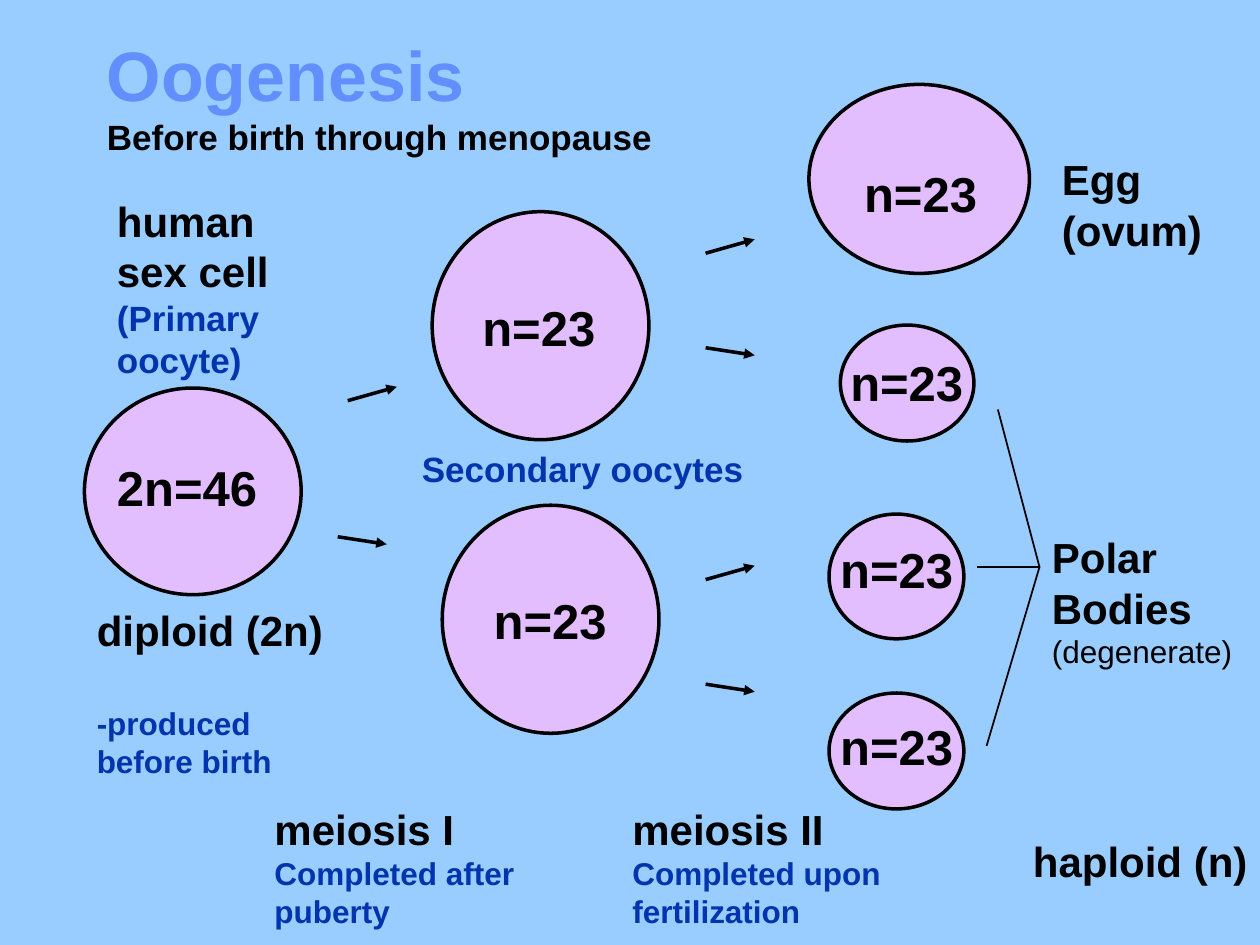
"""Build the Oogenesis slide: meiosis from primary oocyte to egg and polar bodies."""
from dataclasses import dataclass

from lxml.etree import SubElement
from pptx import Presentation
from pptx.dml.color import RGBColor
from pptx.enum.shapes import MSO_CONNECTOR, MSO_SHAPE
from pptx.enum.text import MSO_ANCHOR
from pptx.oxml.ns import qn
from pptx.util import Inches, Pt


@dataclass(frozen=True)
class Theme:
    """Colours, font and type sizes."""
    background: str = "99CCFF"
    cell: str = "E3BEFF"
    ink: str = "000000"
    note: str = "0234AD"
    title: str = "618FFD"
    font: str = "Arial"
    title_size: int = 40
    count_size: int = 28
    label_size: int = 24
    sub_size: int = 20
    note_size: int = 18


THEME = Theme()


def rgb(value):
    """Turn a hex string into a colour."""
    return RGBColor.from_string(value)


def add_run(p, text, size=THEME.label_size, color=THEME.ink, bold=True):
    """Add a formatted run to a paragraph."""
    r = p.add_run()
    r.text = text
    r.font.name = THEME.font
    r.font.size = Pt(size)
    r.font.bold = bold
    r.font.color.rgb = rgb(color)


class Diagram:
    """Hold the style and the current slide, and draw each kind of element."""

    def __init__(self, slide, theme):
        """Keep the slide and theme, and paint the background."""
        self.s, self.theme = slide, theme
        slide.background.fill.solid()
        slide.background.fill.fore_color.rgb = rgb(theme.background)

    def cell(self, x, y, w, h):
        """Draw an outlined oval cell."""
        sp = self.s.shapes.add_shape(
            MSO_SHAPE.OVAL, Inches(x), Inches(y), Inches(w), Inches(h))
        sp.shadow.inherit = False
        sp.fill.solid()
        sp.fill.fore_color.rgb = rgb(self.theme.cell)
        sp.line.color.rgb = rgb(self.theme.ink)
        sp.line.width = Pt(2)

    def text(self, x, y, w, h, *lines, anchor=MSO_ANCHOR.TOP):
        """Write (text, format) lines, one paragraph each."""
        tf = self.s.shapes.add_textbox(
            Inches(x), Inches(y), Inches(w), Inches(h)).text_frame
        tf.word_wrap = True
        tf.vertical_anchor = anchor
        for i, (text, style) in enumerate(lines):
            p = tf.add_paragraph() if i else tf.paragraphs[0]
            style = dict(style)
            p.space_before = Pt(style.pop("before", 0))
            add_run(p, text, **style)

    def count(self, x, y, text="n=23", w=1.15):
        """Write a chromosome count."""
        self.text(x, y, w, 0.57, (text, {"size": self.theme.count_size}))

    def line(self, start, end, width=1, arrow=False):
        """Draw a straight line, with an arrowhead on request."""
        points = [Inches(v) for v in (*start, *end)]
        sp = self.s.shapes.add_connector(MSO_CONNECTOR.STRAIGHT, *points)
        sp.line.color.rgb = rgb(self.theme.ink)
        sp.line.width = Pt(width)
        if arrow:
            SubElement(sp.line._get_or_add_ln(), qn("a:tailEnd"), type="triangle")
        SubElement(sp._element.spPr, qn("a:effectLst"))

    def arrow(self, x, y, rise):
        """Draw a short division arrow."""
        self.line((x, y), (x + 0.39, y + rise), width=2, arrow=True)


def main():
    """Build and save the slide."""
    prs = Presentation()
    prs.slide_width, prs.slide_height = Inches(10), Inches(7.5)
    d = Diagram(prs.slides.add_slide(prs.slide_layouts[6]), THEME)
    label = {}
    sub = {"size": THEME.sub_size, "color": THEME.note}
    note = {"size": THEME.note_size, "color": THEME.note}
    up, down = -0.11, 0.06

    d.text(0.75, 0.25, 5.42, 1,
           ("Oogenesis", {"size": THEME.title_size, "color": THEME.title}),
           ("Before birth through menopause", {"size": THEME.sub_size}),
           anchor=MSO_ANCHOR.MIDDLE)

    cells = [
        (0.67, 3.08, 1.72, 1.64), (3.51, 4.01, 1.72, 1.81), (3.43, 1.68, 1.72, 1.81),
        (6.42, 0.67, 1.75, 1.5), (6.67, 2.58, 1.06, 0.92),
        (6.58, 4.08, 1.07, 0.99), (6.58, 5.5, 1.07, 0.92),
    ]
    for box in cells:
        d.cell(*box)

    d.count(0.83, 3.58, "2n=46", w=1.4)
    for x, y in [(3.73, 2.31), (3.82, 4.64), (6.76, 1.25),
                 (6.65, 2.75), (6.57, 4.23), (6.57, 5.64)]:
        d.count(x, y)

    for x, y, rise in [(2.76, 3.18, up), (2.68, 4.26, down), (5.6, 2.01, up),
                       (5.6, 2.76, down), (5.6, 4.6, up), (5.6, 5.43, down)]:
        d.arrow(x, y, rise)

    d.text(0.83, 1.5, 1.5, 1.58, ("human", label), ("sex cell", label),
           ("(Primary", sub), ("oocyte)", sub))
    d.text(0.67, 4.75, 2.1, 1.51, ("diploid (2n)", label),
           ("-produced", {**note, "before": 28}), ("before birth", note))
    d.text(3.25, 3.5, 2.9, 0.44, ("Secondary oocytes", sub))
    for x, stage, *timing in [(2.08, "meiosis I", "Completed after", "puberty"),
                              (4.92, "meiosis II", "Completed upon", "fertilization")]:
        d.text(x, 6.33, 2.25, 1.11, (stage, label), *((t, note) for t in timing))
    d.text(8.33, 1.17, 1.4, 0.91, ("Egg", label), ("(ovum)", label))
    d.text(8.1, 6.58, 1.9, 0.91, ("haploid (n)", label))

    for start in [(7.92, 3.25), (7.75, 4.5), (7.83, 5.92)]:
        d.line(start, (8.25, 4.5))
    d.text(8.25, 4.17, 1.75, 1.21, ("Polar", label), ("Bodies", label),
           ("(degenerate)", {"size": THEME.note_size, "bold": False}))

    prs.save("out.pptx")


if __name__ == "__main__":
    main()
